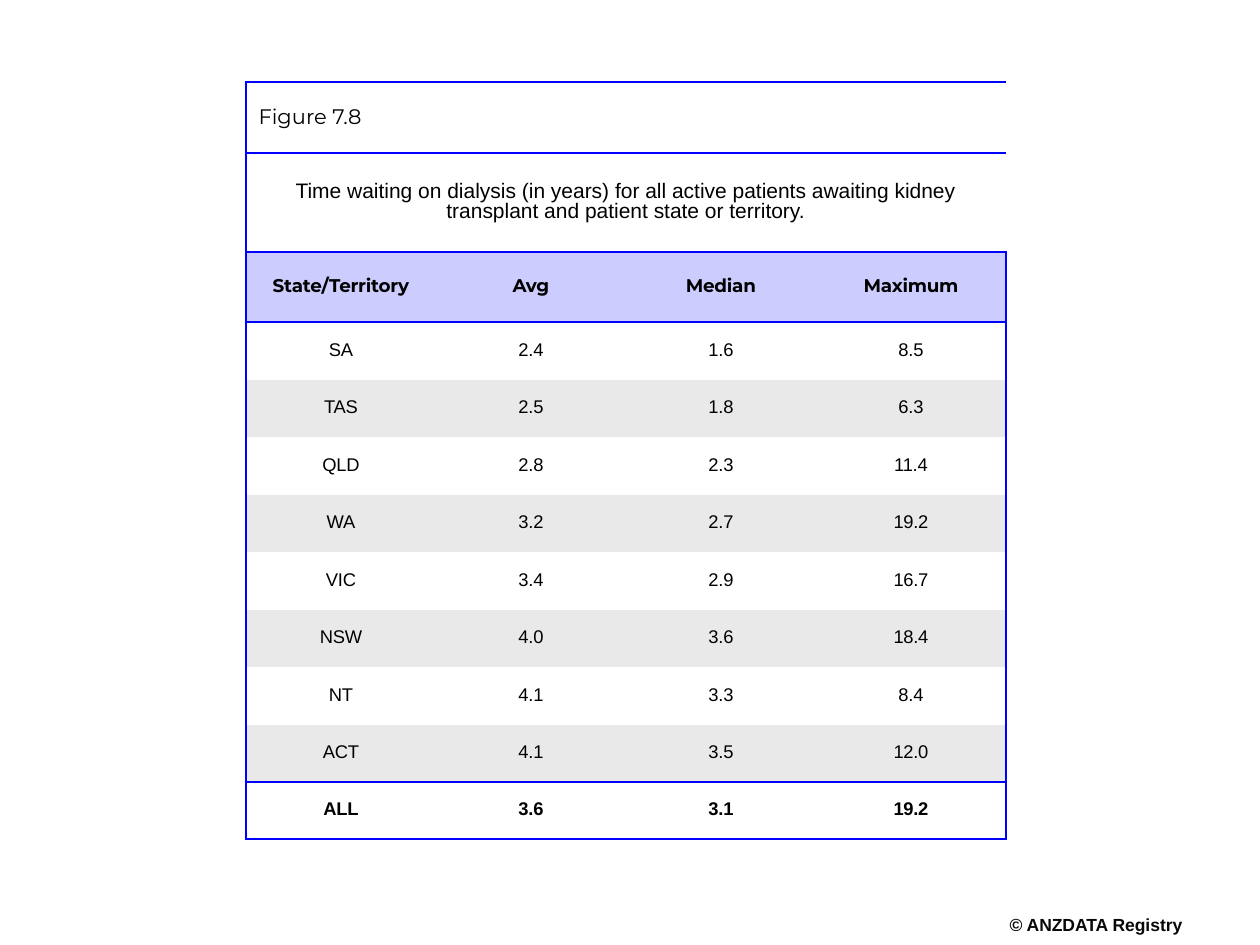
from pptx import Presentation
from pptx.dml.color import RGBColor as RGB
from pptx.enum.text import PP_ALIGN as Align, MSO_ANCHOR as Anchor, MSO_AUTO_SIZE as Fit
from pptx.util import Pt
from lxml.etree import SubElement as Sub
from pptx.oxml.ns import qn

PX = 914400 / 126


def px(n):
    return round(n * PX)


def write(frame, text, size=10.5, font="Arial", color="000000", bold=False,
          align=Align.CENTER, track=0, pad=(5, 5, 5, 5)):
    frame.margin_left, frame.margin_top, frame.margin_right, frame.margin_bottom = map(px, pad)
    para = frame.paragraphs[0]
    para.alignment, para.line_spacing = align, 0.85
    run = para.add_run()
    run.text = text
    run.font.size, run.font.name, run.font.bold = Pt(size), font, bold
    run.font.color.rgb = RGB.from_string(color)
    if track:
        run.font._element.set("spc", str(track))


deck = Presentation()
deck.slide_width, deck.slide_height = px(1260), px(945)
slide = deck.slides.add_slide(deck.slide_layouts[6])

# Table content
head = ["State/Territory", "Avg", "Median", "Maximum"]
data = [
    ["SA", "2.4", "1.6", "8.5"],
    ["TAS", "2.5", "1.8", "6.3"],
    ["QLD", "2.8", "2.3", "11.4"],
    ["WA", "3.2", "2.7", "19.2"],
    ["VIC", "3.4", "2.9", "16.7"],
    ["NSW", "4.0", "3.6", "18.4"],
    ["NT", "4.1", "3.3", "8.4"],
    ["ACT", "4.1", "3.5", "12.0"],
    ["ALL", "3.6", "3.1", "19.2"],
]
high = [71, 99, 70] + [58, 57] * 4 + [57]
rules = {0, 1, 2, 3, 11, 12}

# Table grid
table = slide.shapes.add_table(len(high), 4, px(246), px(82), px(760), px(sum(high))).table
table.first_row = table.horz_banding = False
for col in table.columns:
    col.width = px(190)
for row, size in zip(table.rows, high):
    row.height = px(size)

# Borders and fills
for r in range(len(high)):
    for c in range(4):
        cell = table.cell(r, c)
        cell.vertical_anchor = Anchor.MIDDLE
        props = cell._tc.get_or_add_tcPr()
        sides = {"L": c == 0, "R": c == 3, "T": r in rules, "B": r + 1 in rules}
        for side, drawn in sides.items():
            line = Sub(props, qn(f"a:ln{side}"), w=str(Pt(1)))
            if drawn:
                Sub(Sub(line, qn("a:solidFill")), qn("a:srgbClr"), val="0000FF")
            else:
                Sub(line, qn("a:noFill"))
        shade = "FFFFFF" if r < 2 else "CCCCFF" if r == 2 else "E9E9E9" if r in (4, 6, 8, 10) else None
        if shade:
            cell.fill.solid()
            cell.fill.fore_color.rgb = RGB.from_string(shade)
        else:
            cell.fill.background()

# Title rows
for r in range(2):
    table.cell(r, 0).merge(table.cell(r, 3))
label, title = table.cell(0, 0), table.cell(1, 0)
write(label.text_frame, "Figure 7.8", size=12, font="Montserrat", align=Align.LEFT)
write(title.text_frame, "Time waiting on dialysis (in years) for all active patients "
      "awaiting kidney transplant and patient state or territory.", size=12, pad=(49, 3, 49, 3))
label.vertical_anchor = title.vertical_anchor = Anchor.MIDDLE

# Column heads
for c, text in enumerate(head):
    write(table.cell(2, c).text_frame, text, font="Montserrat", bold=True, track=-10,
          pad=(5, 5, 10 if c else 5, 5))

# Values, with one-digit maximums nudged right to line up
for r, row in enumerate(data, 3):
    for c, text in enumerate(row):
        nudge = 10 if c == 3 and len(text) == 3 else 0
        write(table.cell(r, c).text_frame, text, bold=row[0] == "ALL", track=-10,
              pad=(5 + nudge, 5, 5, 5))

# Footer
frame = slide.shapes.add_textbox(px(1007), px(917), px(178), px(21)).text_frame
frame.word_wrap, frame.auto_size = False, Fit.SHAPE_TO_FIT_TEXT
write(frame, "© ANZDATA Registry", size=10, color="080808", bold=True, pad=(0, 0, 0, 0))

deck.save("out.pptx")
